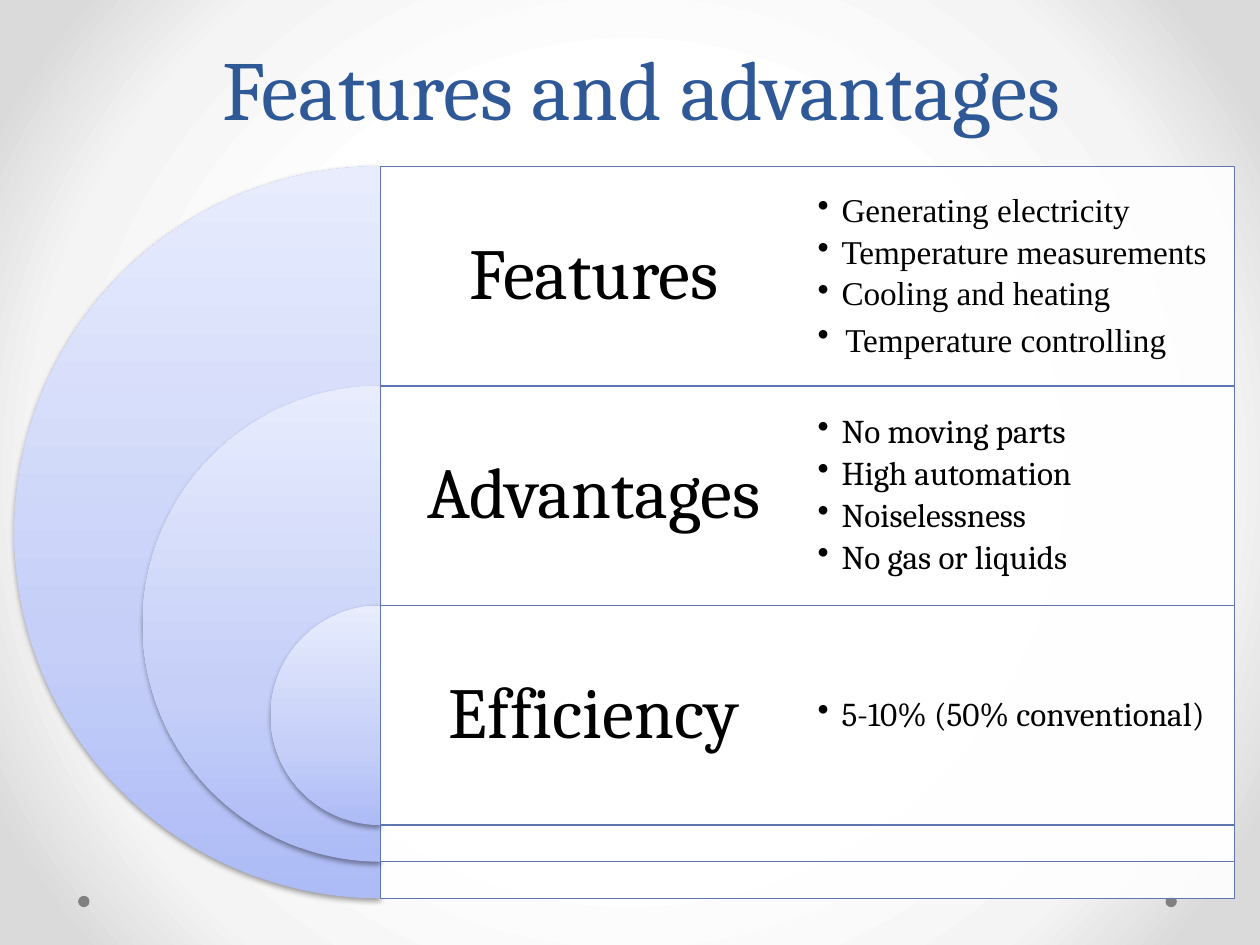
from pptx import Presentation
from pptx.dml.color import RGBColor
from pptx.enum.shapes import MSO_SHAPE
from pptx.enum.text import MSO_ANCHOR, PP_ALIGN
from pptx.oxml import parse_xml
from pptx.oxml.ns import qn
from pptx.util import Inches, Pt

RECT, PIE, OVAL = MSO_SHAPE.RECTANGLE, MSO_SHAPE.PIE, MSO_SHAPE.OVAL
MIDDLE, BOTTOM = MSO_ANCHOR.MIDDLE, MSO_ANCHOR.BOTTOM
CENTER, LEFT = PP_ALIGN.CENTER, PP_ALIGN.LEFT
NS = ('xmlns:a="http://schemas.openxmlformats.org/drawingml/2006/main" '
      'xmlns:p="http://schemas.openxmlformats.org/presentationml/2006/main"')

UNIT = 5.81 / 20
ORIGIN_X, ORIGIN_Y = 3.02, 1.32
ROW, RING_STEP, COL = 6, 7, 35 / 3

BACKDROP = [(50, "FFFFFF"), (76, "F4F4F4"), (92, "DADADA")]
RING = [(0, "ADBBF6"), (35, "C5CFF8"), (100, "E8ECFD")]
SECTIONS = [
    ("Features", "Times New Roman",
     ["Generating electricity", "Temperature measurements",
      "Cooling and heating", "Temperature controlling"]),
    ("Advantages", "Cambria",
     ["No moving parts", "High automation", "Noiselessness", "No gas or liquids"]),
    ("Efficiency", "Cambria", ["5-10% (50% conventional)"]),
]


def color(value):
    """Return the colour for a hex string."""
    return RGBColor.from_string(value)


def grid(col, row, w, h):
    """Turn grid columns and rows into lengths."""
    return [Inches(v) for v in (ORIGIN_X + col * UNIT, ORIGIN_Y + row * UNIT,
                                w * UNIT, h * UNIT)]


def gradient(stops, direction):
    """Return a gradient fill element."""
    gs = "".join(f'<a:gs pos="{pos * 1000}"><a:srgbClr val="{c}"/></a:gs>'
                 for pos, c in stops)
    return f'<a:gradFill {NS} rotWithShape="1"><a:gsLst>{gs}</a:gsLst>{direction}</a:gradFill>'


class Deck:
    """Hold the style and the current slide."""

    title = {"size": Pt(48), "name": "Cambria"}
    heading = {"size": Pt(41), "name": "Cambria"}
    item = {"size": Pt(19)}

    def __init__(self, prs):
        """Add a blank slide."""
        self.w, self.h = prs.slide_width, prs.slide_height
        self.s = prs.slides.add_slide(prs.slide_layouts[6])

    def share(self, *parts):
        """Turn shares of the slide into lengths."""
        return [int(v * size) for v, size in zip(parts, (self.w, self.h) * 2)]

    def background(self, stops):
        """Fill the slide with a radial gradient."""
        path = ('<a:path path="circle"><a:fillToRect l="50000" t="50000" '
                'r="50000" b="50000"/></a:path>')
        bg = f'<p:bg {NS}><p:bgPr>{gradient(stops, path)}<a:effectLst/></p:bgPr></p:bg>'
        self.s._element.cSld.insert(0, parse_xml(bg))

    def shape(self, kind, box, fill):
        """Add a plain filled shape without an outline."""
        sp = self.s.shapes.add_shape(kind, *box)
        sp.shadow.inherit = False
        sp.fill.solid()
        sp.fill.fore_color.rgb = color(fill)
        sp.line.fill.background()
        return sp

    def ring(self, row, size):
        """Add a shaded half disc centred on the panel edge."""
        sp = self.shape(PIE, grid(-size / 2, row, size, size), RING[0][1])
        sp.adjustments[0], sp.adjustments[1] = 54, 162
        pr = sp._element.spPr
        fill = parse_xml(gradient(RING, '<a:lin ang="16200000" scaled="0"/>'))
        pr.replace(pr.find(qn("a:solidFill")), fill)
        shadow = (f'<a:effectLst {NS}><a:outerShdw blurRad="{Pt(3.1)}" dist="{Pt(1.6)}" '
                  'dir="5400000" rotWithShape="0"><a:srgbClr val="000000">'
                  '<a:alpha val="38000"/></a:srgbClr></a:outerShdw></a:effectLst>')
        pr.replace(pr.find(qn("a:effectLst")), parse_xml(shadow))

    def panel(self, row, h):
        """Add a translucent outlined panel."""
        sp = self.shape(RECT, grid(0, row, 2 * COL, h), "FFFFFF")
        sp.line.color.rgb = color("6076B4")
        sp.line.width = Pt(0.75)
        clr = sp._element.spPr.find(qn("a:solidFill"))[0]
        clr.append(parse_xml(f'<a:alpha {NS} val="90000"/>'))

    def text(self, box, lines, font, para, anchor=MIDDLE, inset=0.08, fill="000000"):
        """Add a text box with one paragraph per line."""
        tf = self.s.shapes.add_textbox(*box).text_frame
        frame = {"word_wrap": True, "vertical_anchor": anchor}
        frame.update({f"margin_{side}": Inches(inset)
                      for side in ("left", "right", "top", "bottom")})
        for key, value in frame.items():
            setattr(tf, key, value)
        for i, line in enumerate(lines):
            p = tf.add_paragraph() if i else tf.paragraphs[0]
            r = p.add_run()
            r.text = line
            for key, value in para.items():
                setattr(p, key, value)
            for key, value in font.items():
                setattr(r.font, key, value)
            r.font.color.rgb = color(fill)
        return tf

    def bullet(self, p, indent):
        """Give a paragraph a bullet and a hanging indent."""
        pr = p._p.get_or_add_pPr()
        pr.set("marL", str(Inches(indent)))
        pr.set("indent", str(-Inches(indent)))
        pr.append(parse_xml(f'<a:buChar {NS} char="•"/>'))

    def bullets(self, row, lines, name):
        """Add the list of a section."""
        tf = self.text(grid(COL, row, COL, ROW), lines, {**self.item, "name": name},
                       {"alignment": LEFT, "line_spacing": 0.9, "space_after": Pt(3.4)})
        for p in tf.paragraphs:
            self.bullet(p, 0.19)
        return tf


def main():
    """Build the slide."""
    prs = Presentation()
    prs.slide_width, prs.slide_height = Inches(10), Inches(7.5)
    deck = Deck(prs)
    deck.background(BACKDROP)
    for x in (0.925, 0.062):
        deck.shape(OVAL, deck.share(x, 0.948, 0.009, 0.012), "808080")
    for i, (name, _, _) in enumerate(SECTIONS):
        row, size = i * ROW, 20 - i * RING_STEP
        deck.ring(row, size)
        deck.panel(row, size)
        deck.text(grid(0, row, COL, ROW), [name], deck.heading,
                  {"alignment": CENTER, "line_spacing": 0.9}, inset=0.17)
    lists = [deck.bullets(i * ROW, lines, font)
             for i, (_, font, lines) in enumerate(SECTIONS)]
    last = lists[0].paragraphs[-1]
    last.line_spacing, last.space_after = 1.0, Pt(0)
    last._p.pPr.set("marL", str(Inches(0.22)))
    last._p.pPr.set("indent", str(-Inches(0.22)))
    deck.text(deck.share(0.059, -0.015, 0.9, 0.167), ["Features and advantages"],
              deck.title, {"alignment": CENTER, "line_spacing": Pt(58)},
              BOTTOM, 0.05, "2F5897")
    prs.save("out.pptx")


if __name__ == "__main__":
    main()
